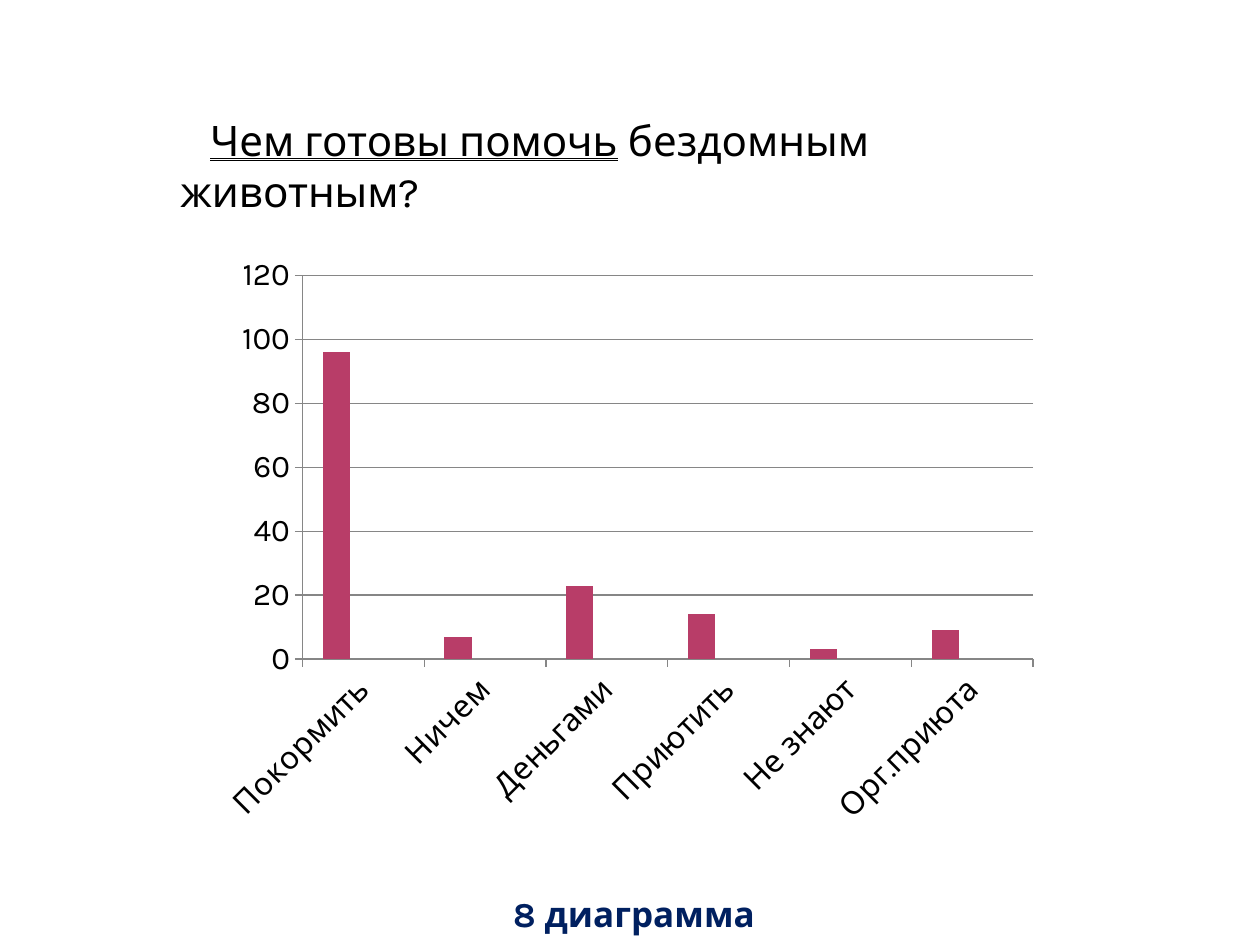
import pptx
import pptx.chart.data
import pptx.dml.color
import pptx.enum.chart
import pptx.enum.text
import pptx.oxml
import pptx.oxml.ns
import pptx.util

Pt = pptx.util.Pt
FONT = "Karla"


def rgb(value):
    return pptx.dml.color.RGBColor.from_string(value)


def add_run(p, text, size=24, color="000000", bold=False, underline=None):
    r = p.add_run()
    r.text = text
    r.font.name = FONT
    r.font.size = Pt(size)
    r.font.bold = bold
    r.font.underline = underline
    r.font.color.rgb = rgb(color)


prs = pptx.Presentation()
prs.slide_width, prs.slide_height = Pt(720), Pt(540)
s = prs.slides.add_slide(prs.slide_layouts[6])

data = pptx.chart.data.CategoryChartData()
data.categories = ["Покормить", "Ничем", "Деньгами", "Приютить", "Не знают", "Орг.приюта"]
data.add_series("Series 1", [96, 7, 23, 14, 3, 9])
data.add_series("Series 2", [None] * 6)
data.add_series("Series 3", [None] * 6)
chart = s.shapes.add_chart(
    pptx.enum.chart.XL_CHART_TYPE.COLUMN_CLUSTERED,
    Pt(120), Pt(140.5), Pt(480), Pt(337.5), data).chart
chart.has_legend = False
chart.has_title = False
chart.font.name = FONT
chart.font.size = Pt(18)
chart.font.color.rgb = rgb("000000")

plot = chart.plots[0]
plot.vary_by_categories = False
plot.gap_width = 150
plot.overlap = 0
for series, color in zip(plot.series, ["B83D68", "AC66BB", "DE6C36"]):
    series.format.fill.solid()
    series.format.fill.fore_color.rgb = rgb(color)

axis = chart.value_axis
axis.minimum_scale, axis.maximum_scale, axis.major_unit = 0, 120, 20
axis.has_major_gridlines = True
for line in (axis.format.line, chart.category_axis.format.line, axis.major_gridlines.format.line):
    line.color.rgb = rgb("868686")
    line.width = Pt(0.75)
for ax in (axis, chart.category_axis):
    ax.major_tick_mark = pptx.enum.chart.XL_TICK_MARK.OUTSIDE
    ax.tick_labels.font.size = Pt(18)
    ax.tick_labels.font.name = FONT
    ax.tick_labels.font.color.rgb = rgb("000000")
body = chart.category_axis._element.find(".//" + pptx.oxml.ns.qn("a:bodyPr"))
body.set("rot", "-2700000")
body.set("vert", "horz")

area = chart._chartSpace.chart.plotArea
for old in area.findall(pptx.oxml.ns.qn("c:layout")):
    area.remove(old)
area.insert(0, pptx.oxml.parse_xml(
    f'<c:layout {pptx.oxml.ns.nsdecls("c")}><c:manualLayout>'
    '<c:layoutTarget val="inner"/><c:xMode val="edge"/><c:yMode val="edge"/>'
    '<c:x val="0.11"/><c:y val="0.05"/><c:w val="0.87"/><c:h val="0.65"/>'
    '</c:manualLayout></c:layout>'))

tf = s.shapes.add_textbox(Pt(36), Pt(506), Pt(402.5), Pt(28)).text_frame
tf.word_wrap = True
tf.margin_top = tf.margin_bottom = 0
tf.vertical_anchor = pptx.enum.text.MSO_ANCHOR.BOTTOM
p = tf.paragraphs[0]
p.alignment = pptx.enum.text.PP_ALIGN.RIGHT
add_run(p, "8 диаграмма", size=20, color="002060", bold=True)

tf = s.shapes.add_textbox(Pt(96), Pt(62), Pt(526), Pt(36)).text_frame
tf.word_wrap = True
p = tf.paragraphs[0]
p._p.get_or_add_pPr().set("indent", str(Pt(17)))
add_run(p, "Чем готовы помочь", underline=pptx.enum.text.MSO_UNDERLINE.DOUBLE_LINE)
add_run(p, " бездомным животным?")

prs.save("out.pptx")
